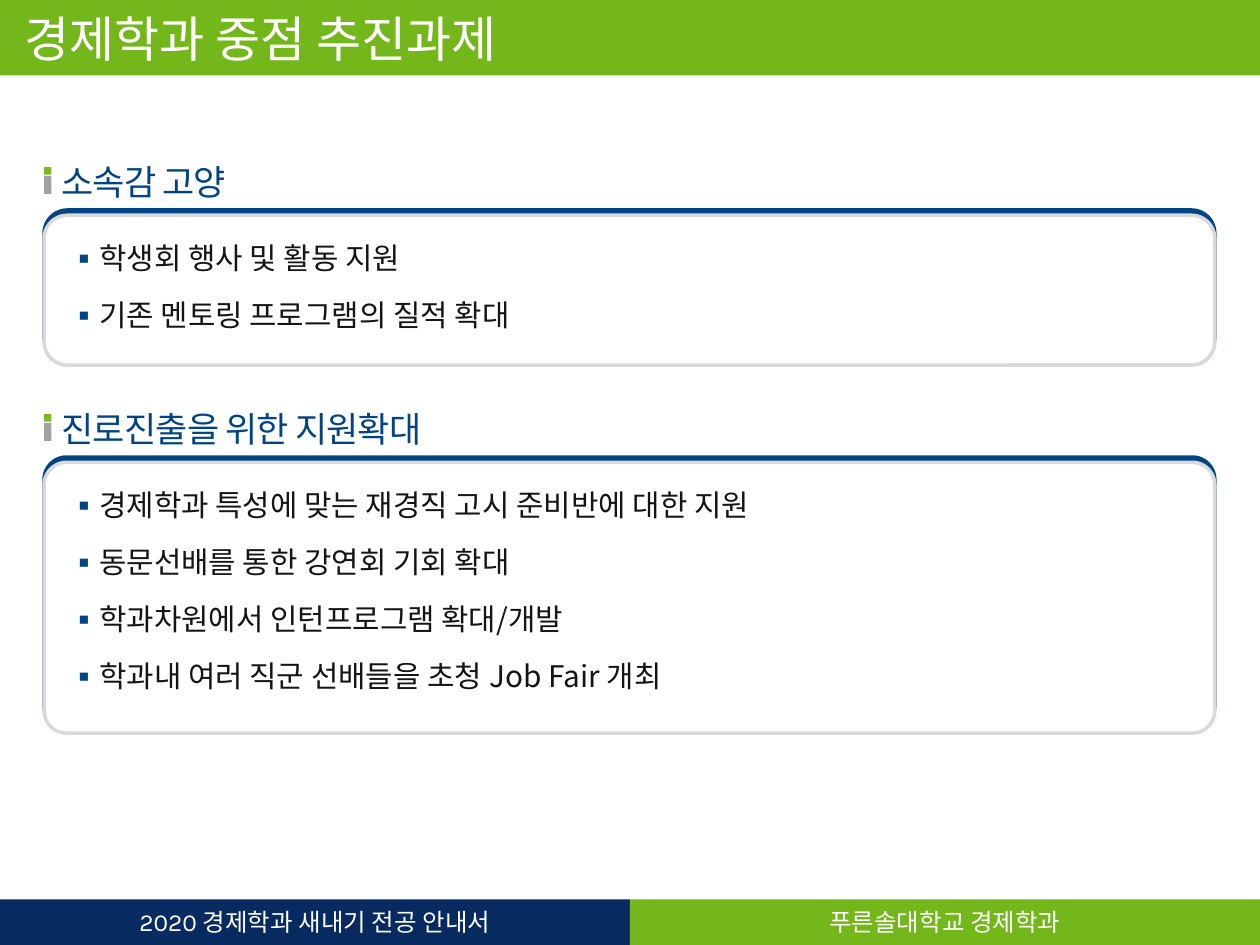
from lxml.etree import SubElement
from pptx import Presentation
from pptx.dml.color import RGBColor
from pptx.enum.shapes import MSO_SHAPE
from pptx.enum.text import MSO_ANCHOR, MSO_AUTO_SIZE, PP_ALIGN
from pptx.oxml.ns import qn
from pptx.util import Cm, Pt

COLORS = {
    "green": "74B71A", "marker": "7DB927", "navy": "072A60", "blue": "004483",
    "gray": "A2A2A2", "border": "D9D9D9", "ink": "141414", "white": "FFFFFF",
}
LATIN, KOREAN = "Karla", "Noto Sans CJK KR"
CARD_LEFT, CARD_WIDTH = 0.89, 23.6
SLIDE_WIDTH, SLIDE_HEIGHT = 25.4, 19.05
FOOTER_HEIGHT = 0.92

# Heading, card top, card height, corner radius ratio, list items
SECTIONS = [
    ("소속감 고양", 4.34, 3.02, 0.155,
     ["학생회 행사 및 활동 지원", "기존 멘토링 프로그램의 질적 확대"]),
    ("진로진출을 위한 지원확대", 9.32, 5.46, 0.083,
     ["경제학과 특성에 맞는 재경직 고시 준비반에 대한 지원",
      "동문선배를 통한 강연회 기회 확대",
      "학과차원에서 인턴프로그램 확대/개발",
      "학과내 여러 직군 선배들을 초청 Job Fair 개최"]),
]


def rgb(name):
    return RGBColor.from_string(COLORS[name])


def place(shape, left, top, width, height):
    shape.left, shape.top = Cm(left), Cm(top)
    shape.width, shape.height = Cm(width), Cm(height)


def write(shape, *lines, size, color, font=LATIN, align=PP_ALIGN.LEFT,
          anchor=MSO_ANCHOR.MIDDLE, insets=(0, 0, 0, 0), bullet=None,
          line_spacing=1.0, space_before=0, tracking=None):
    """Fill a shape with one paragraph per line; insets are left, top, right, bottom in cm."""
    frame = shape.text_frame
    frame.word_wrap = True
    frame.auto_size = MSO_AUTO_SIZE.NONE
    frame.vertical_anchor = anchor
    (frame.margin_left, frame.margin_top,
     frame.margin_right, frame.margin_bottom) = map(Cm, insets)
    frame.text = "\n".join(lines)
    for paragraph in frame.paragraphs:
        paragraph.alignment = align
        paragraph.line_spacing = line_spacing
        paragraph.space_before = Pt(space_before)
        if bullet:
            add_bullet(paragraph, bullet)
        run = paragraph.runs[0]
        run.font.size = Pt(size)
        run.font.name = font
        run.font.color.rgb = rgb(color)
        properties = run.font._element
        SubElement(properties, qn("a:ea"), typeface=KOREAN)
        if tracking:
            properties.set("spc", str(round(tracking * 100)))


def add_bullet(paragraph, symbol):
    properties = paragraph._p.get_or_add_pPr()
    properties.set("marL", str(Cm(0.48)))
    properties.set("indent", str(-Cm(0.48)))
    bullet_color = SubElement(properties, qn("a:buClr"))
    SubElement(bullet_color, qn("a:srgbClr"), val=COLORS["blue"])
    SubElement(properties, qn("a:buFont"), typeface=KOREAN)
    SubElement(properties, qn("a:buChar"), char=symbol)


def add_top_edge(card):
    """Give the card a hard blue shadow that shows only above it."""
    effects = card.element.spPr.find(qn("a:effectLst"))
    shadow = SubElement(effects, qn("a:outerShdw"), blurRad="0", dist=str(Pt(3)),
                        dir=str(270 * 60000), algn="b", rotWithShape="0")
    SubElement(shadow, qn("a:srgbClr"), val=COLORS["blue"])


class GuideSlide:
    def __init__(self, slide):
        self.slide = slide

    def block(self, left, top, width, height, fill, kind=MSO_SHAPE.RECTANGLE):
        block = self.slide.shapes.add_shape(
            kind, Cm(left), Cm(top), Cm(width), Cm(height))
        block.shadow.inherit = False
        block.fill.solid()
        block.fill.fore_color.rgb = rgb(fill)
        block.line.fill.background()
        return block

    def title(self, wording):
        title = self.slide.shapes.title
        place(title, 0, 0, SLIDE_WIDTH, 1.52)
        title.fill.solid()
        title.fill.fore_color.rgb = rgb("green")
        write(title, wording, size=28, color="white", insets=(0.5, 0.13, 0.25, 0.13))

    def footer(self, *labels_and_fills):
        width = SLIDE_WIDTH / len(labels_and_fills)
        for column, (label, fill) in enumerate(labels_and_fills):
            band = self.block(column * width, SLIDE_HEIGHT - FOOTER_HEIGHT,
                              width, FOOTER_HEIGHT, fill)
            write(band, label, size=14, color="white", align=PP_ALIGN.CENTER)

    def heading(self, wording, card_top):
        self.block(CARD_LEFT, card_top - 0.79, 0.15, 0.36, "gray")
        self.block(CARD_LEFT, card_top - 0.97, 0.15, 0.15, "marker")
        heading = self.slide.shapes.add_textbox(
            Cm(1.24), Cm(card_top - 1.12), Cm(13.39), Cm(0.86))
        write(heading, wording, size=20, color="blue", font=KOREAN, tracking=-0.5)

    def card(self, items, body, top, height, radius):
        bounds = (CARD_LEFT, top, CARD_WIDTH, height)
        card = self.block(*bounds, "white", MSO_SHAPE.ROUNDED_RECTANGLE)
        card.adjustments[0] = radius
        card.line.color.rgb = rgb("border")
        card.line.width = Pt(2)
        add_top_edge(card)
        place(body, *bounds)
        body.element.addprevious(card.element)
        write(body, *items, size=17, color="ink", font=KOREAN, anchor=MSO_ANCHOR.TOP,
              insets=(0.51, 0.2, 0.3, 0), bullet="▪", line_spacing=1.4, space_before=4)


def main():
    deck = Presentation()
    deck.slide_width, deck.slide_height = Cm(SLIDE_WIDTH), Cm(SLIDE_HEIGHT)
    two_content = deck.slide_layouts[3]
    slide = deck.slides.add_slide(two_content)
    guide = GuideSlide(slide)
    guide.footer(("2020 경제학과 새내기 전공 안내서", "navy"),
                 ("푸른솔대학교 경제학과", "green"))
    guide.title("경제학과 중점 추진과제")
    bodies = list(slide.placeholders)[1:]
    for body, (heading, top, height, radius, items) in zip(bodies, SECTIONS):
        guide.card(items, body, top, height, radius)
        guide.heading(heading, top)
    deck.save("out.pptx")


if __name__ == "__main__":
    main()
